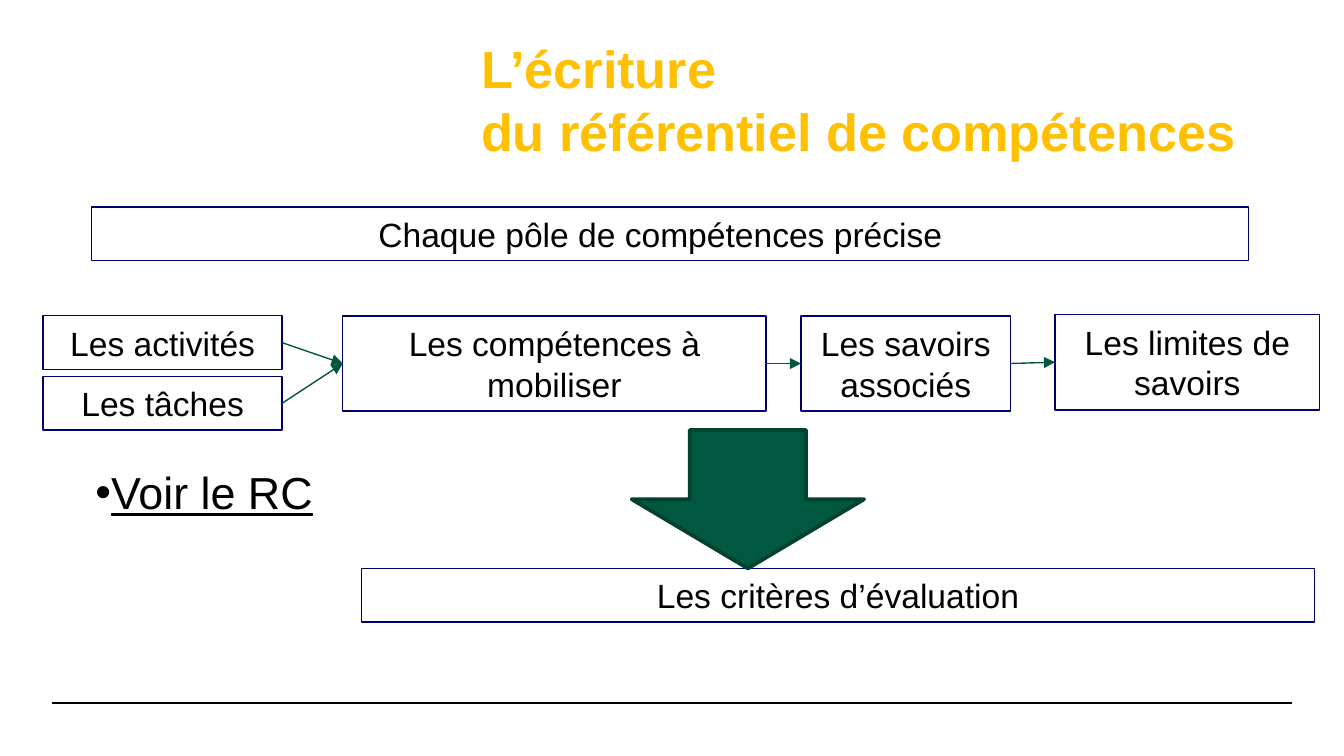
import pptx
import pptx.util
import pptx.dml.color
import pptx.enum.shapes
import pptx.enum.text
import pptx.oxml
import pptx.oxml.ns

Inches, Pt = pptx.util.Inches, pptx.util.Pt
Shape = pptx.enum.shapes.MSO_SHAPE
Align, Anchor = pptx.enum.text.PP_ALIGN, pptx.enum.text.MSO_ANCHOR

WIDTH = 10
HEIGHT = WIDTH * 9 / 16
FONT = "Arial"
COLOURS = {"title": "FFC000", "text": "000000", "border": "00006D",
           "link": "005640", "arrow": "005841", "arrow_edge": "004130"}

TITLE = "L’écriture\vdu référentiel de compétences"
BULLET = "Voir le RC"

# Box heights for one and two lines of text, and the tops of the rows
ONE, TWO = 0.4, 0.71
ROWS = {"scope": 1.54, "limits": 2.34, "chain": 2.35, "tasks": 2.8,
        "arrow": 3.2, "bullet": 3.46, "criteria": 4.23, "rule": 5.23}
# Left edge and width of each column
COLUMNS = {"scope": (0.68, 8.61), "inputs": (0.32, 1.78), "skills": (2.55, 3.15),
           "knowledge": (5.96, 1.56), "limits": (7.85, 1.97),
           "criteria": (2.69, 7.09), "arrow": (4.7, 1.73)}
# name: (text, column, row, height, right inset)
BOXES = {
    "skills": ("Les compétences à mobiliser", "skills", "chain", TWO, 0.1),
    "knowledge": ("Les savoirs associés", "knowledge", "chain", TWO, 0.1),
    "limits": ("Les limites de savoirs", "limits", "limits", TWO, 0.1),
    "criteria": ("Les critères d’évaluation", "criteria", "criteria", ONE, 0.1),
    "scope": ("Chaque pôle de compétences précise", "scope", "scope", ONE, 0.24),
    "activities": ("Les activités", "inputs", "chain", ONE, 0.1),
    "tasks": ("Les tâches", "inputs", "tasks", ONE, 0.1),
}
LINKS = [("activities", "skills"), ("tasks", "skills"),
         ("skills", "knowledge"), ("knowledge", "limits")]


def rgb(name):
    return pptx.dml.color.RGBColor.from_string(COLOURS[name])


def add_xml(parent, tag, **attributes):
    child = pptx.oxml.parse_xml(f"<a:{tag} {pptx.oxml.ns.nsdecls('a')}/>")
    for key, value in attributes.items():
        child.set(key, str(value))
    parent.append(child)


def write(shape, text, size=18, colour="text", bold=False, underline=False,
          align=Align.LEFT, anchor=Anchor.MIDDLE, insets=(0, 0, 0, 0)):
    """Fill a shape with one formatted paragraph; insets run left, top, right, bottom."""
    frame = shape.text_frame
    frame.word_wrap = True
    frame.auto_size = pptx.enum.text.MSO_AUTO_SIZE.NONE
    frame.vertical_anchor = anchor
    (frame.margin_left, frame.margin_top,
     frame.margin_right, frame.margin_bottom) = map(Inches, insets)
    para = frame.paragraphs[0]
    para.text = text
    para.alignment = align
    for span in para.runs:
        span.font.name, span.font.size = FONT, Pt(size)
        span.font.bold, span.font.underline = bold, underline
        span.font.color.rgb = rgb(colour)
    return para


def add_block(page, kind, column, row, height, edge, weight, fill=None):
    left, width = COLUMNS[column]
    block = page.shapes.add_shape(kind, *map(Inches, (left, ROWS[row], width, height)))
    block.shadow.inherit = False
    block.line.color.rgb = rgb(edge)
    block.line.width = Pt(weight)
    if fill:
        block.fill.solid()
        block.fill.fore_color.rgb = rgb(fill)
    else:
        block.fill.background()
    return block


def add_line(page, points, colour, weight):
    line = page.shapes.add_connector(pptx.enum.shapes.MSO_CONNECTOR.STRAIGHT,
                                     *map(Inches, points))
    line.line.color.rgb = rgb(colour)
    line.line.width = Pt(weight)
    add_xml(line._element.spPr, "effectLst")
    return line


deck = pptx.Presentation()
deck.slide_width, deck.slide_height = Inches(WIDTH), Inches(HEIGHT)
page = deck.slides.add_slide(deck.slide_layouts[5])

margin = 0.39
add_line(page, (margin, ROWS["rule"], WIDTH - margin, ROWS["rule"]), "text", 0.8)

title = page.shapes.title
title.left, title.top, title.width, title.height = map(Inches, (3.58, 0.27, 5.92, 0.94))
write(title, TITLE, size=28, colour="title", bold=True)

bullet = page.shapes.add_textbox(*map(Inches, (COLUMNS["inputs"][0], ROWS["bullet"], 2.5, 0.52)))
para = write(bullet, BULLET, size=24, underline=True, anchor=Anchor.TOP)
properties = para._p.get_or_add_pPr()
properties.set("marL", str(Inches(0.47)))
properties.set("indent", str(Inches(-0.08)))
add_xml(properties, "buFont", typeface=FONT)
add_xml(properties, "buChar", char="•")

boxes = {}
for name, (text, column, row, height, right) in BOXES.items():
    boxes[name] = add_block(page, Shape.RECTANGLE, column, row, height, "border", 0.75)
    write(boxes[name], text, align=Align.CENTER, insets=(0.1, 0.05, right, 0.05))

for source, target in LINKS:
    link = add_line(page, (0, 0, 0, 0), "link", 0.75)
    link.begin_connect(boxes[source], 3)
    link.end_connect(boxes[target], 1)
    add_xml(link.line._get_or_add_ln(), "tailEnd", type="triangle")

add_block(page, Shape.DOWN_ARROW, "arrow", "arrow", ROWS["criteria"] - ROWS["arrow"],
          "arrow_edge", 2, fill="arrow")

deck.save("out.pptx")
